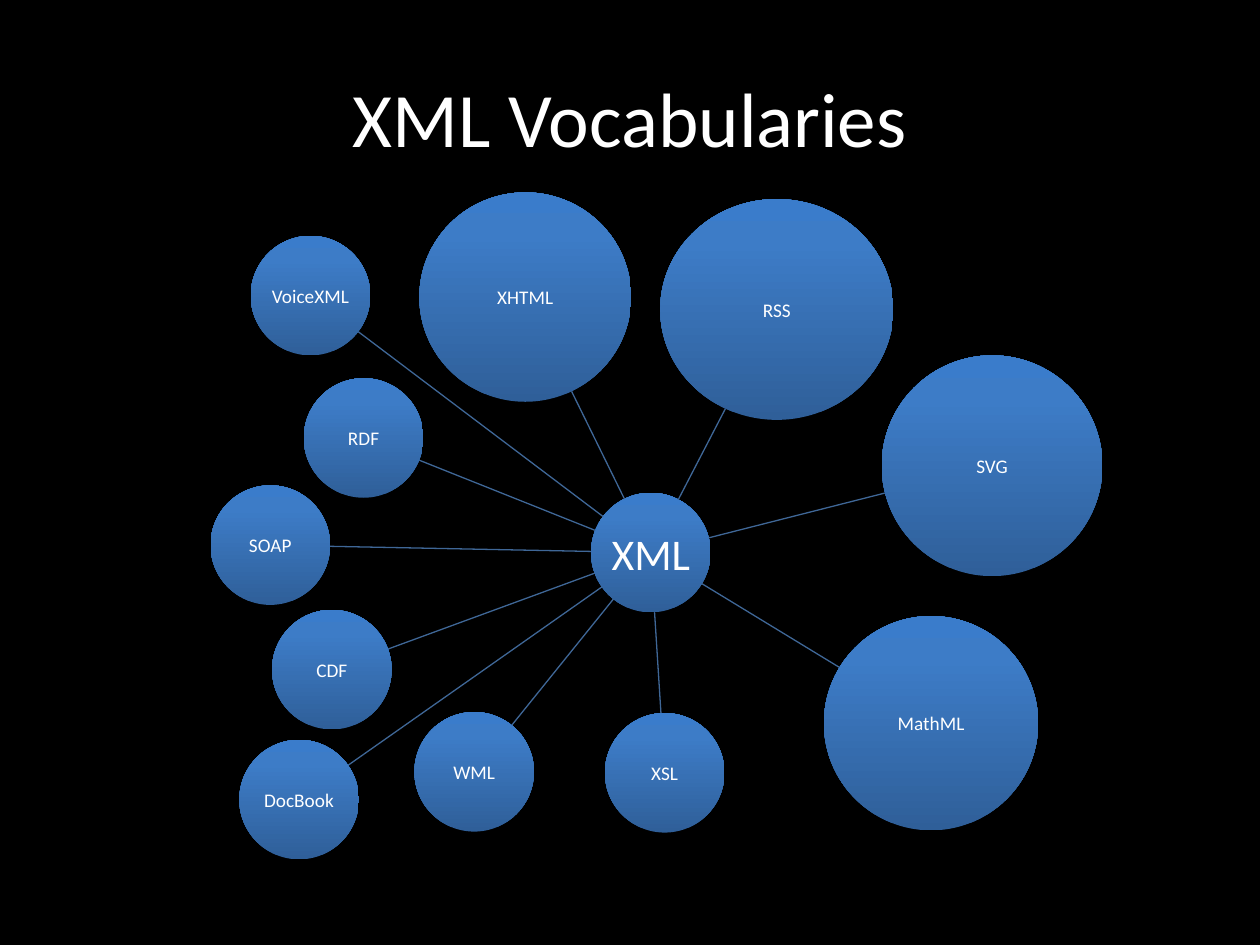
from copy import deepcopy
from math import hypot

from pptx import Presentation
from pptx.dml.color import RGBColor
from pptx.enum.shapes import MSO_CONNECTOR, MSO_SHAPE
from pptx.enum.text import MSO_ANCHOR, PP_ALIGN
from pptx.oxml.ns import qn
from pptx.oxml.xmlchemy import OxmlElement
from pptx.util import Cm, Pt

# Content: label, centre x, centre y, width, height (cm)
TITLE = "XML Vocabularies"
SMALL = (2.41, 2.41)
HUB = ("XML", 13.12, 11.14, *SMALL)
NODES = [
    ("XHTML", 10.59, 5.99, 4.27, 4.22),
    ("RSS", 15.66, 6.24, 4.7, 4.45),
    ("SVG", 20, 9.39, 4.45, 4.45),
    ("MathML", 18.77, 14.58, 4.32, 4.32),
    ("XSL", 13.4, 15.58, *SMALL),
    ("CDF", 6.69, 13.5, *SMALL),
    ("DocBook", 6.03, 16.12, *SMALL),
    ("WML", 9.56, 15.56, *SMALL),
    ("SOAP", 5.45, 10.99, *SMALL),
    ("RDF", 7.33, 8.83, *SMALL),
    ("VoiceXML", 6.26, 5.96, *SMALL),
]
THEME = {
    "font": "Calibri",
    "back": RGBColor.from_string("000000"),
    "text": RGBColor.from_string("FFFFFF"),
    "line": RGBColor.from_string("3F6797"),
    "grad": [(0, "2F5F99"), (0.8, "3D7CC7"), (1, "3A7CCB")],
    "title": Pt(44),
    "hub": Pt(25),
    "node": Pt(11),
    "rule": Pt(0.75),
}


def write(frame, text, size):
    frame.text = text
    frame.vertical_anchor = MSO_ANCHOR.MIDDLE
    para = frame.paragraphs[0]
    para.alignment = PP_ALIGN.CENTER
    para.font.name = THEME["font"]
    para.font.size = size
    para.font.color.rgb = THEME["text"]


def shade(shape):
    fill = shape.fill
    fill.gradient()
    fill.gradient_angle = 90
    # A new gradient has two stops, so add the third
    first = shape._element.spPr.find(".//" + qn("a:gs"))
    first.addnext(deepcopy(first))
    for stop, (place, color) in zip(fill.gradient_stops, THEME["grad"]):
        stop.position = place
        stop.color.rgb = RGBColor.from_string(color)


def draw_node(slide, node, size):
    label, x, y, wide, high = node
    shape = slide.shapes.add_shape(
        MSO_SHAPE.OVAL, Cm(x - wide / 2), Cm(y - high / 2), Cm(wide), Cm(high))
    shape.shadow.inherit = False
    shape.line.fill.background()
    shade(shape)
    frame = shape.text_frame
    frame.word_wrap = False
    frame.margin_left = frame.margin_right = Cm(0.03)
    frame.margin_top = frame.margin_bottom = Cm(0.03)
    write(frame, label, size)


def edge(node, goal):
    """Point where the ray from node's centre to goal's leaves its ellipse."""
    _, x, y, wide, high = node
    dx, dy = goal[1] - x, goal[2] - y
    part = 1 / hypot(dx / (wide / 2), dy / (high / 2))
    return Cm(x + dx * part), Cm(y + dy * part)


def draw_spoke(slide, node):
    spoke = slide.shapes.add_connector(
        MSO_CONNECTOR.STRAIGHT, *edge(HUB, node), *edge(node, HUB))
    spoke.line.color.rgb = THEME["line"]
    spoke.line.width = THEME["rule"]
    spoke._element.spPr.append(OxmlElement("a:effectLst"))


def main():
    deck = Presentation()
    deck.slide_width, deck.slide_height = Cm(25.4), Cm(19.05)
    slide = deck.slides.add_slide(deck.slide_layouts[5])
    slide.background.fill.solid()
    slide.background.fill.fore_color.rgb = THEME["back"]

    # Title
    title = slide.shapes.title
    title.left, title.top = Cm(1.27), Cm(0.76)
    title.width, title.height = Cm(22.86), Cm(3.18)
    write(title.text_frame, TITLE, THEME["title"])

    # Hub, then each spoke with its node
    draw_node(slide, HUB, THEME["hub"])
    for node in NODES:
        draw_spoke(slide, node)
        draw_node(slide, node, THEME["node"])

    deck.save("out.pptx")


if __name__ == "__main__":
    main()
